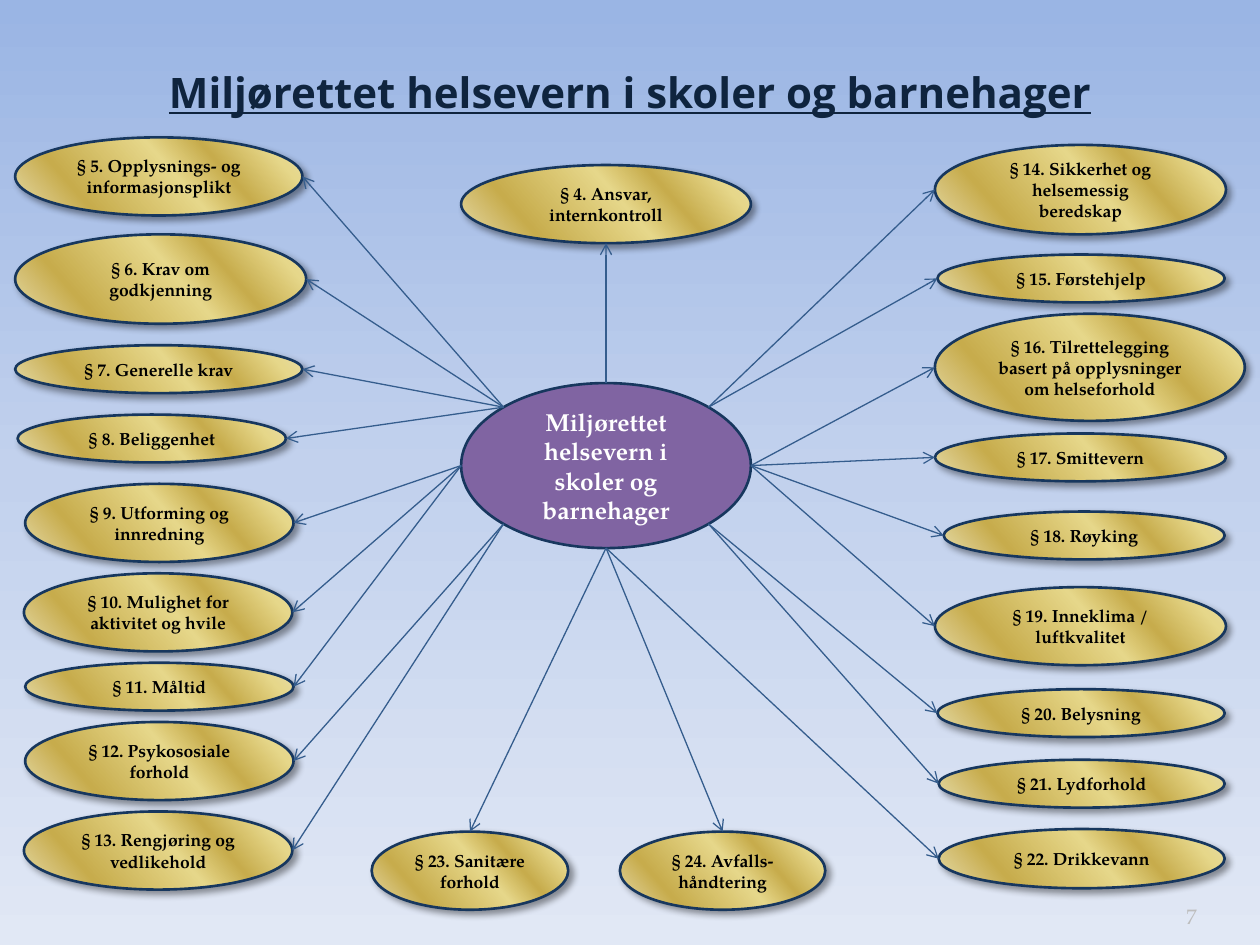
import math
import pptx
import pptx.util
import pptx.dml.color
import pptx.enum.shapes
import pptx.enum.text
import pptx.oxml
import pptx.oxml.ns

Inches = pptx.util.Inches
Pt = pptx.util.Pt
RGBColor = pptx.dml.color.RGBColor
Align = pptx.enum.text.PP_ALIGN
Anchor = pptx.enum.text.MSO_ANCHOR
qn = pptx.oxml.ns.qn

NAVY = RGBColor(0x0F, 0x24, 0x3E)
EDGE = RGBColor(0x17, 0x37, 0x5E)
STEEL = RGBColor(0x35, 0x5D, 0x8D)
PURPLE = RGBColor(0x80, 0x64, 0xA2)
WHITE = RGBColor(0xFF, 0xFF, 0xFF)
BLACK = RGBColor(0x00, 0x00, 0x00)
GREY = RGBColor(0xBD, 0xBD, 0xBD)
PALE = RGBColor(0xE6, 0xDC, 0xAC)
LIGHT = RGBColor(0xE6, 0xD7, 0x8A)
DARK = RGBColor(0xC7, 0xAC, 0x4C)
GOLD = [(0, PALE), (12, LIGHT), (30, DARK), (45, LIGHT), (77, DARK), (100, PALE)]
SKY = [
    (0, RGBColor(0x9A, 0xB5, 0xE4)),
    (50, RGBColor(0xC2, 0xD1, 0xED)),
    (100, RGBColor(0xE1, 0xE8, 0xF5)),
]
SERIF = "TeX Gyre Pagella"
SANS = "Open Sans"
TOPIC = "Miljørettet helsevern i skoler og barnehager"

EAST, SE, SOUTH, SW, WEST, NW, NORTH, NE = range(0, 360, 45)

LEFT = [
    ("§ 5. Opplysnings- og informasjonsplikt", 0, 0, 2.28, 0.62, NW),
    ("§ 6. Krav om godkjenning", 0, 0.77, 2.31, 0.71, NW),
    ("§ 7. Generelle krav", 0, 1.65, 2.28, 0.38, NW),
    ("§ 8. Beliggenhet", 0.02, 2.2, 2.13, 0.38, NW),
    ("§ 9. Utforming og innredning", 0.08, 2.75, 2.13, 0.62, WEST),
    ("§ 10. Mulighet for aktivitet og hvile", 0.07, 3.46, 2.13, 0.62, WEST),
    ("§ 11. Måltid", 0.08, 4.17, 2.13, 0.38, WEST),
    ("§ 12. Psykososiale forhold", 0.08, 4.64, 2.13, 0.62, SW),
    ("§ 13. Rengjøring og vedlikehold", 0.07, 5.35, 2.13, 0.62, SW),
]
RIGHT = [
    ("§ 14. Sikkerhet og helsemessig beredskap", 0, 0, 2.31, 0.71, NE),
    ("§ 15. Førstehjelp", 0.02, 0.87, 2.28, 0.38, NE),
    ("§ 16. Tilrettelegging basert på opplysninger om helseforhold",
     0, 1.34, 2.46, 0.85, EAST),
    ("§ 17. Smittevern", 0, 2.29, 2.31, 0.38, EAST),
    ("§ 18. Røyking", 0.07, 2.91, 2.23, 0.38, EAST),
    ("§ 19. Inneklima / luftkvalitet", 0, 3.51, 2.31, 0.62, EAST),
    ("§ 20. Belysning", 0.02, 4.32, 2.28, 0.38, SE),
    ("§ 21. Lydforhold", 0.03, 4.88, 2.27, 0.38, SE),
    ("§ 22. Drikkevann", 0.03, 5.43, 2.27, 0.47, SOUTH),
]
ABOVE = [("§ 4. Ansvar, internkontroll", 0, 0, 2.3, 0.62, NORTH)]
BELOW = [
    ("§ 23. Sanitære forhold", 0, 0, 1.56, 0.62, SOUTH),
    ("§ 24. Avfalls-håndtering", 1.97, 0, 1.63, 0.62, SOUTH),
]


def place(box):
    return [Inches(side) for side in box]


def add(parent, tag, **attrs):
    child = pptx.oxml.parse_xml(f"<a:{tag} {pptx.oxml.ns.nsdecls('a')}/>")
    for name, value in attrs.items():
        child.set(name, str(value))
    parent.append(child)
    return child


def blend(owner, fill, stops, angle):
    fill.gradient()
    grad = next(owner.iter(qn("a:gradFill")))
    group = grad.find(qn("a:gsLst"))
    for stop in list(group):
        group.remove(stop)
    for pos, color in stops:
        add(add(group, "gs", pos=pos * 1000), "srgbClr", val=color)
    grad.find(qn("a:lin")).set("ang", str(angle * 60000))


def write(shape, text, size, color, font=SERIF, bold=True, align=Align.CENTER,
          anchor=Anchor.MIDDLE):
    frame = shape.text_frame
    frame.text = text
    frame.word_wrap = True
    frame.vertical_anchor = anchor
    para = frame.paragraphs[0]
    para.alignment = align
    style = para.runs[0].font
    style.name, style.size, style.bold = font, Pt(size), bold
    style.color.rgb = color
    return style


def oval(slide, box, text, size, color):
    shape = slide.shapes.add_shape(pptx.enum.shapes.MSO_SHAPE.OVAL, *place(box))
    shape.shadow.inherit = False
    shape.line.color.rgb = EDGE
    shape.line.width = Pt(1.5)
    write(shape, text, size, color)
    return shape


def rim(box, angle):
    left, top, width, height = box
    turn = math.radians(angle)
    return (Inches(left + width / 2 * (1 + math.cos(turn))),
            Inches(top + height / 2 * (1 + math.sin(turn))))


def arrow(slide, start, end):
    link = slide.shapes.add_connector(
        pptx.enum.shapes.MSO_CONNECTOR.STRAIGHT, *start, *end)
    link.line.color.rgb = STEEL
    link.line.width = Pt(0.75)
    add(link.line._get_or_add_ln(), "tailEnd", type="arrow")
    add(link._element.spPr, "effectLst")


def title(slide, box):
    label = slide.shapes.add_textbox(*place(box))
    write(label, TOPIC, 24, NAVY, SANS).underline = True


def center(slide, box):
    shape = oval(slide, box, TOPIC, 14, WHITE)
    shape.fill.solid()
    shape.fill.fore_color.rgb = PURPLE


def rules(slide, box, rows, hub, side):
    for text, right, down, width, height, site in rows:
        spot = (box[0] + right, box[1] + down, width, height)
        shape = oval(slide, spot, text, 10, BLACK)
        props = shape._element.spPr
        blend(props, shape.fill, GOLD, 139)
        glow = add(props.find(qn("a:effectLst")), "outerShdw", blurRad=Pt(4),
                   dist=Pt(3), dir=45 * 60000, algn="tl", rotWithShape=0)
        add(add(glow, "srgbClr", val=BLACK), "alpha", val=40000)
        arrow(slide, rim(hub, site), rim(spot, side))


def number(slide, box):
    label = slide.shapes.add_textbox(*place(box))
    label.text_frame.margin_left = label.text_frame.margin_right = 0
    write(label, "7", 12, GREY, bold=False, align=Align.RIGHT, anchor=Anchor.BOTTOM)


def main():
    deck = pptx.Presentation()
    deck.slide_width, deck.slide_height = Inches(10), Inches(7.5)
    slide = deck.slides.add_slide(deck.slide_layouts[6])
    blend(slide._element, slide.background.fill, SKY, 90)
    hub = (3.66, 3.04, 2.3, 1.31)
    title(slide, (0.5, 0.3, 9, 0.85))
    center(slide, hub)
    rules(slide, (3.66, 1.31, 2.3, 0.62), ABOVE, hub, SOUTH)
    rules(slide, (0.12, 1.09, 2.31, 5.97), LEFT, hub, EAST)
    rules(slide, (7.42, 1.15, 2.46, 5.9), RIGHT, hub, WEST)
    rules(slide, (2.95, 6.6, 3.6, 0.62), BELOW, hub, NORTH)
    number(slide, (8.67, 7.02, 0.83, 0.4))
    deck.save("out.pptx")


if __name__ == "__main__":
    main()
